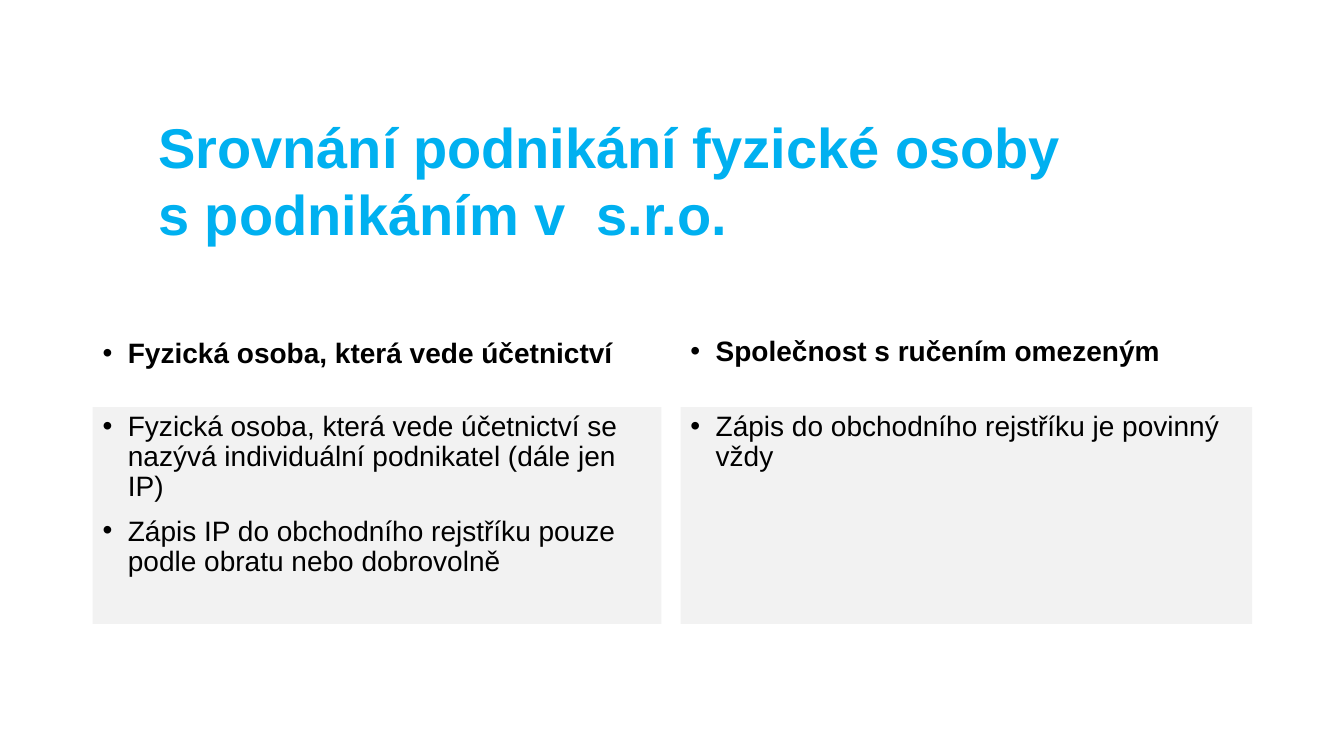
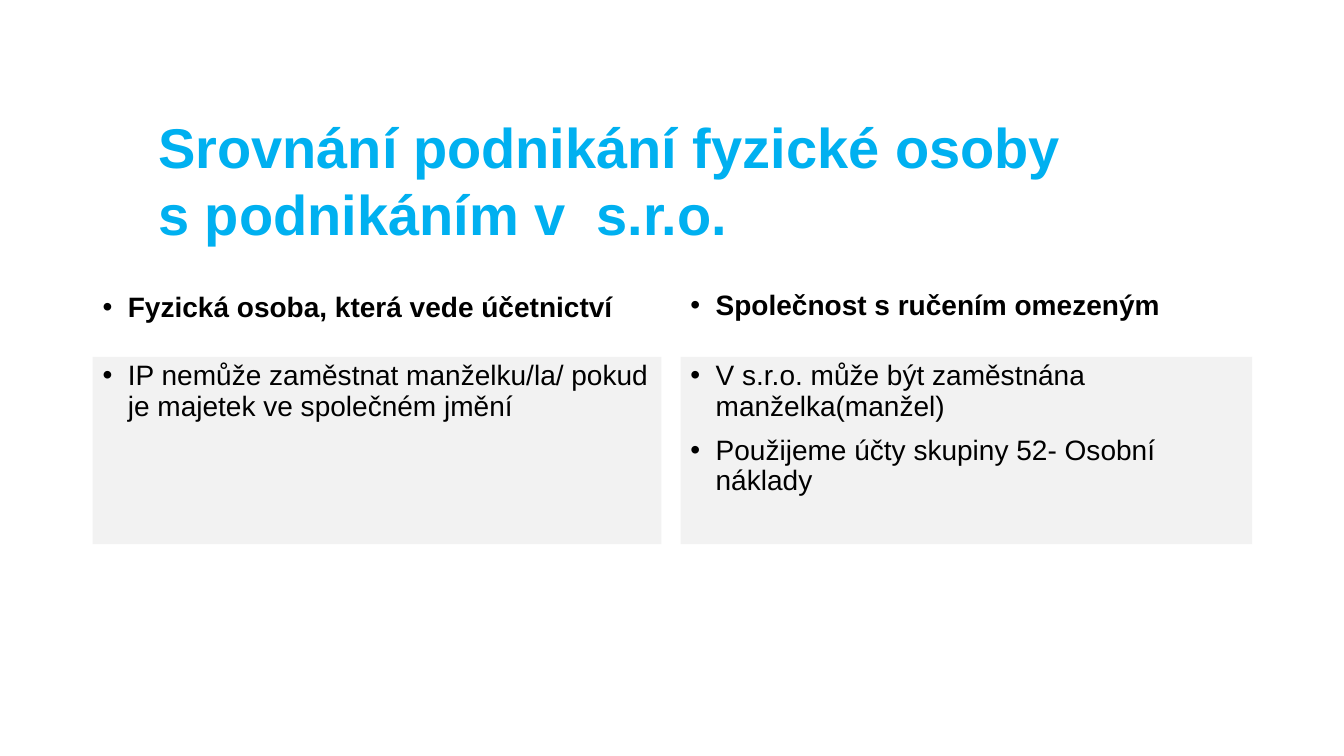
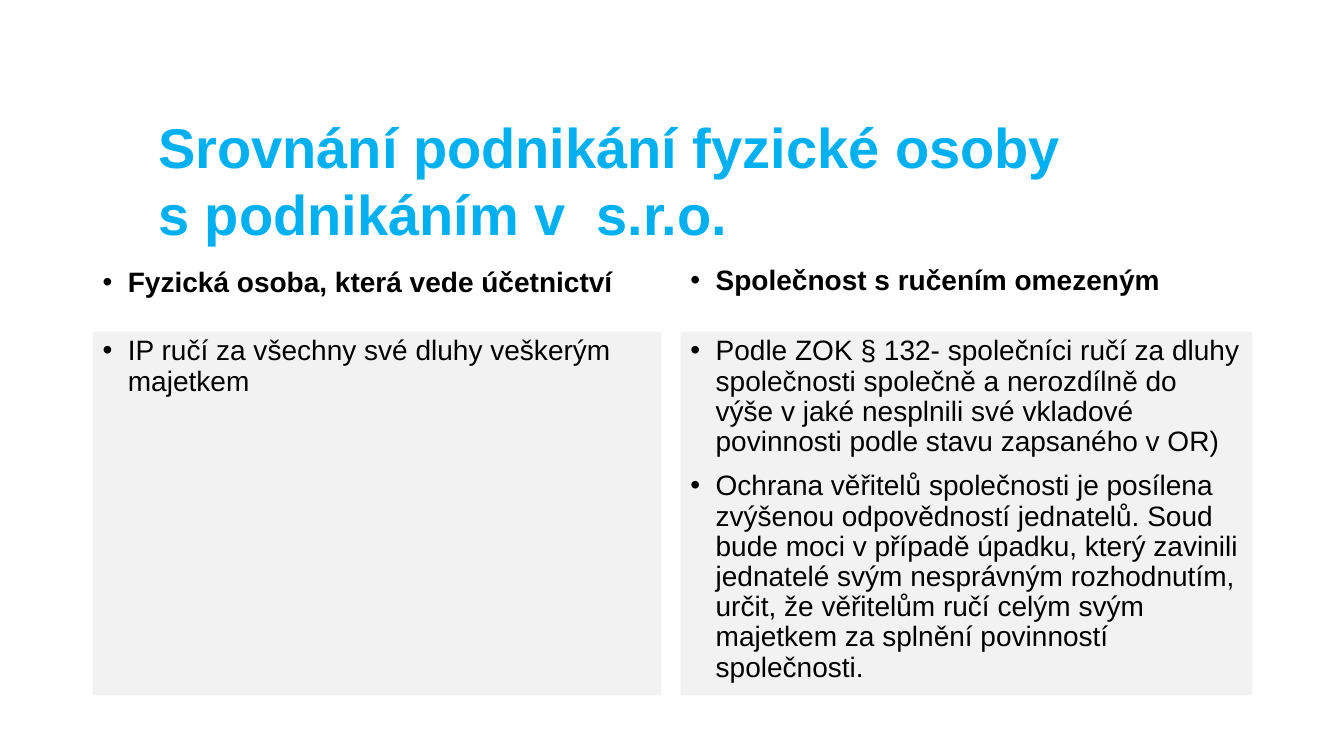
"""Build three slides comparing a sole trader with a limited company."""
from dataclasses import dataclass

from lxml import etree
from pptx import Presentation
from pptx.dml.color import RGBColor
from pptx.enum import shapes, text
from pptx.oxml import ns
from pptx.util import Inches, Pt

COLORS = {"title": "00B0F0", "text": "000000", "panel": "F2F2F2"}
TITLE = "Srovnání podnikání fyzické osoby s podnikáním v  s.r.o."
TITLE_FORMAT = {"name": "Arial", "size": Pt(40), "bold": True}
HEADING_FORMAT = {"name": "Arial", "size": Pt(20), "bold": True}
BODY_FORMAT = {"name": "Arial", "size": Pt(20), "bold": False}
HEADING_HEIGHT = 0.41


@dataclass(frozen=True)
class Column:
    """Heading and horizontal place of one compared form of business."""

    heading: str
    left: float
    width: float
    heading_shift: float


@dataclass(frozen=True)
class Comparison:
    """Vertical places of one slide and the points of each column."""

    heading_top: float
    panel_top: float
    panel_height: float
    points: tuple[tuple[str, ...], ...]


COLUMNS = (
    Column("Fyzická osoba, která vede účetnictví", 0.92, 5.64, 0.02),
    Column("Společnost s ručením omezeným", 6.75, 5.67, 0),
)
COMPARISONS = (
    Comparison(3.3, 4.04, 2.15, (
        ("Fyzická osoba, která vede účetnictví se nazývá individuální podnikatel (dále jen IP)",
         "Zápis IP do obchodního rejstříku pouze podle obratu nebo dobrovolně"),
        ("Zápis do obchodního rejstříku je povinný vždy",),
    )),
    Comparison(2.84, 3.54, 1.86, (
        ("IP nemůže zaměstnat manželku/la/ pokud je majetek ve společném jmění",),
        ("V s.r.o. může být zaměstnána manželka(manžel)",
         "Použijeme účty skupiny 52- Osobní náklady"),
    )),
    Comparison(2.59, 3.29, 3.61, (
        ("IP ručí za všechny své dluhy veškerým majetkem",),
        ("Podle ZOK § 132- společníci ručí za dluhy společnosti společně a nerozdílně "
         "do výše v jaké nesplnili své vkladové povinnosti podle stavu zapsaného v OR)",
         "Ochrana věřitelů společnosti je posílena zvýšenou odpovědností jednatelů. "
         "Soud bude moci v případě úpadku, který zavinili jednatelé svým nesprávným "
         "rozhodnutím, určit, že věřitelům ručí celým svým majetkem za splnění "
         "povinností společnosti."),
    )),
)


def format_font(font, values: dict, color: str) -> None:
    """Apply format values and a named colour to a font."""
    for name, value in values.items():
        setattr(font, name, value)
    font.color.rgb = RGBColor.from_string(COLORS[color])


def add_bullet(paragraph) -> None:
    """Give a paragraph a round bullet with a hanging indent."""
    properties = paragraph._p.get_or_add_pPr()
    properties.set("marL", str(Inches(0.25)))
    properties.set("indent", str(-Inches(0.25)))
    etree.SubElement(properties, ns.qn("a:buFont")).set("typeface", "Arial")
    etree.SubElement(properties, ns.qn("a:buChar")).set("char", "•")


def write_points(shape, points: tuple[str, ...], values: dict) -> None:
    """Write bulleted paragraphs from the top of a shape."""
    frame = shape.text_frame
    frame.word_wrap = True
    frame.vertical_anchor = text.MSO_ANCHOR.TOP
    for index, point in enumerate(points):
        paragraph = frame.add_paragraph() if index else frame.paragraphs[0]
        paragraph.text = point
        add_bullet(paragraph)
        paragraph.alignment = text.PP_ALIGN.LEFT
        paragraph.line_spacing = 0.9
        paragraph.space_before = Pt(10 if index else 0)
        format_font(paragraph.runs[0].font, values, "text")


def add_title(slide) -> None:
    """Place and format the shared title."""
    title = slide.shapes.title
    title.left, title.top = Inches(1.47), Inches(1.31)
    title.width, title.height = Inches(9.32), Inches(0.94)
    frame = title.text_frame
    frame.text = TITLE
    frame.word_wrap = True
    frame.auto_size = text.MSO_AUTO_SIZE.NONE
    frame.vertical_anchor = text.MSO_ANCHOR.MIDDLE
    paragraph = frame.paragraphs[0]
    paragraph.alignment = text.PP_ALIGN.LEFT
    format_font(paragraph.runs[0].font, TITLE_FORMAT, "title")


def add_column(slide, column: Column, comparison: Comparison, points: tuple[str, ...]) -> None:
    """Draw one column: its heading and the panel below."""
    left, width = Inches(column.left), Inches(column.width)
    heading = slide.shapes.add_textbox(
        left, Inches(comparison.heading_top + column.heading_shift), width, Inches(HEADING_HEIGHT))
    write_points(heading, (column.heading,), HEADING_FORMAT)
    panel = slide.shapes.add_shape(
        shapes.MSO_SHAPE.RECTANGLE, left, Inches(comparison.panel_top),
        width, Inches(comparison.panel_height))
    panel.shadow.inherit = False
    panel.fill.solid()
    panel.fill.fore_color.rgb = RGBColor.from_string(COLORS["panel"])
    panel.line.fill.background()
    write_points(panel, points, BODY_FORMAT)


def main() -> None:
    """Build and save the presentation."""
    presentation = Presentation()
    presentation.slide_width, presentation.slide_height = Inches(13.33), Inches(7.5)
    for comparison in COMPARISONS:
        slide = presentation.slides.add_slide(presentation.slide_layouts[5])
        add_title(slide)
        for column, points in zip(COLUMNS, comparison.points):
            add_column(slide, column, comparison, points)
    presentation.save("out.pptx")


if __name__ == "__main__":
    main()
